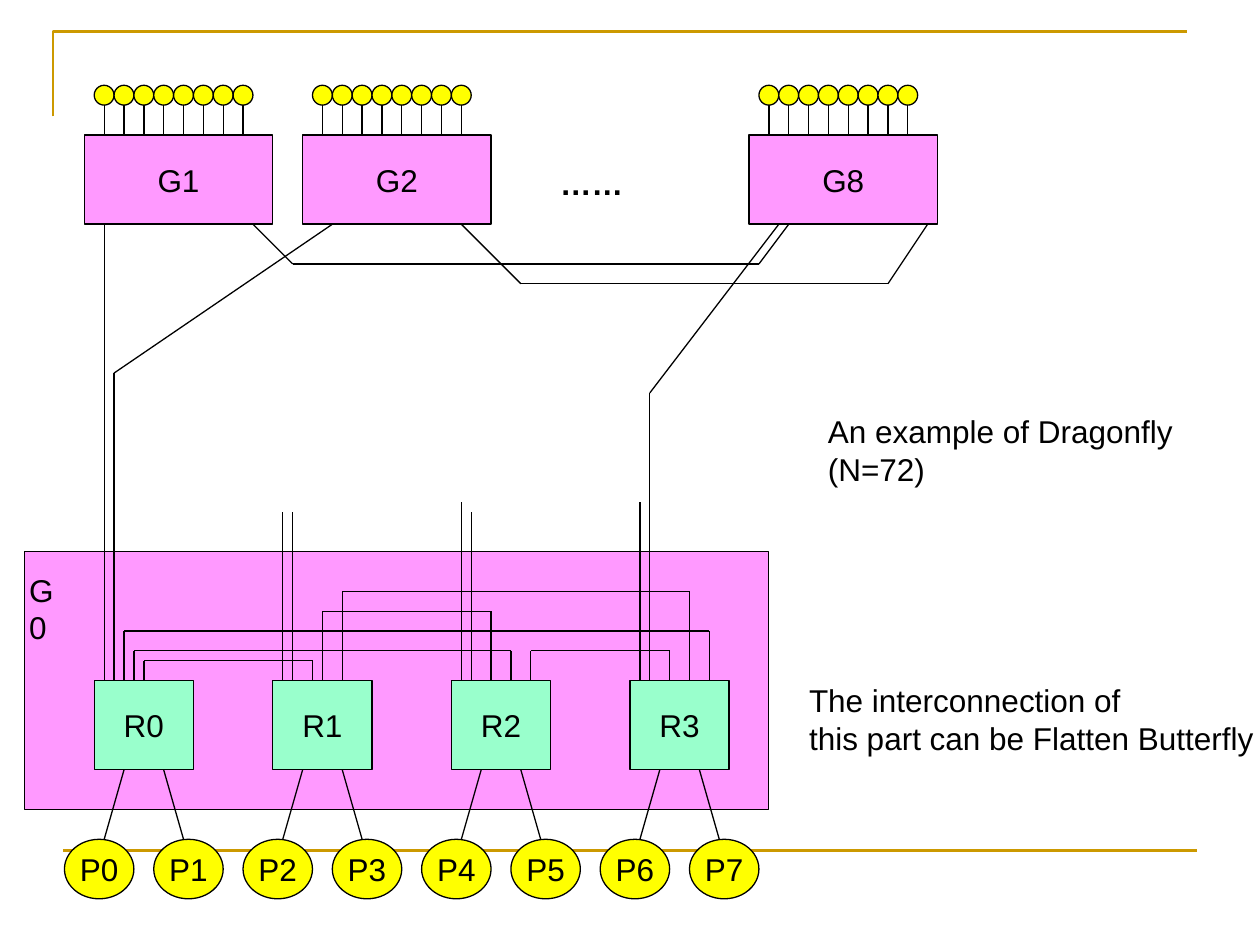
from itertools import pairwise

from lxml.etree import SubElement
from pptx import Presentation
from pptx.dml.color import RGBColor
from pptx.enum.shapes import MSO_CONNECTOR, MSO_SHAPE
from pptx.enum.text import MSO_ANCHOR, MSO_AUTO_SIZE, PP_ALIGN
from pptx.oxml.ns import qn
from pptx.util import Inches, Mm, Pt

BLACK = RGBColor(0x00, 0x00, 0x00)
GOLD = RGBColor(0xCC, 0x99, 0x00)
PINK = RGBColor(0xFF, 0x99, 0xFF)
MINT = RGBColor(0x99, 0xFF, 0xCC)
YELLOW = RGBColor(0xFF, 0xFF, 0x00)
FONT = {"name": "Arial", "size": Pt(18)}

deck = Presentation()
deck.slide_width, deck.slide_height = Inches(10), Inches(7.5)
wide, high = deck.slide_width, deck.slide_height
slide = deck.slides.add_slide(deck.slide_layouts[6])
shapes = slide.shapes

# The drawing sits on a 2 mm grid, shifted by part of a cell.
CELL = Mm(2)
LEFT, TOP = 0.5, 0.6


def place(col, row):
    """Turn a grid point into slide lengths."""
    return int((col + LEFT) * CELL), int((row + TOP) * CELL)


def wire(points, color=BLACK, width=0.75):
    """Join slide points, in order, with straight connectors."""
    for start, end in pairwise(points):
        line = shapes.add_connector(MSO_CONNECTOR.STRAIGHT, *start, *end)
        line.line.color.rgb = color
        line.line.width = Pt(width)
        SubElement(line._element.spPr, qn("a:effectLst"))


# Gold frame
pen = shapes.build_freeform(int(wide * 0.042), int(high * 0.123))
pen.add_line_segments(
    [(int(wide * 0.042), int(high * 0.033)), (int(wide * 0.942), int(high * 0.033))],
    close=False,
)
frame = pen.convert_to_shape()
frame.shadow.inherit = False
frame.fill.background()
frame.line.color.rgb = GOLD
frame.line.width = Pt(1.5)
wire([(int(wide * x), int(high * 0.9)) for x in (0.05, 0.95)], GOLD, 1.5)

# Boxes and discs: kind, label, col, row, cols, rows, fill
RECT, DISC = MSO_SHAPE.RECTANGLE, MSO_SHAPE.OVAL
groups = {"G1": 8, "G2": 30, "G8": 75}
nodes = [(RECT, "", 2, 55, 75, 26, PINK)]
nodes += [(RECT, f"R{i}", 9 + 18 * i, 68, 10, 9, MINT) for i in range(4)]
nodes += [(DISC, f"P{i}", 6 + 9 * i, 84, 7, 6, YELLOW) for i in range(8)]
for name, col in groups.items():
    nodes.append((RECT, name, col, 13, 19, 9, PINK))
    nodes += [(DISC, "", col + 1 + 2 * i, 8, 2, 2, YELLOW) for i in range(8)]

for kind, label, col, row, cols, rows, fill in nodes:
    node = shapes.add_shape(kind, *place(col, row), cols * CELL, rows * CELL)
    node.shadow.inherit = False
    node.fill.solid()
    node.fill.fore_color.rgb = fill
    node.line.color.rgb = BLACK
    node.line.width = Pt(0.75)
    if label:
        frame = node.text_frame
        frame.word_wrap = False
        frame.vertical_anchor = MSO_ANCHOR.MIDDLE
        para = frame.paragraphs[0]
        para.text = label
        para.alignment = PP_ALIGN.CENTER
        para.font.color.rgb = BLACK
        for key, value in FONT.items():
            setattr(para.font, key, value)

# Wires, each a list of grid points
wires = []
for col in groups.values():
    for i in range(8):
        wires.append([(col + 2 + 2 * i, 10), (col + 2 + 2 * i, 13)])
for i in range(4):
    col = 18 * i
    wires.append([(col + 10, 84), (col + 12, 77)])
    wires.append([(col + 18, 84), (col + 16, 77)])
# Links between routers: from col, to col, row of the crossbar
for start, end, row in [
    (12, 71, 63), (13, 51, 65), (14, 31, 66),
    (32, 49, 61), (34, 69, 59), (53, 67, 65),
]:
    wires.append([(start, 68), (start, row), (end, row), (end, 68)])
# Open links going up from the routers
for col, row in [(28, 51), (29, 51), (46, 50), (47, 51), (64, 50)]:
    wires.append([(col, 68), (col, row)])
# Links between groups
wires += [
    [(10, 68), (10, 22)],
    [(11, 68), (11, 37), (33, 22)],
    [(65, 68), (65, 39), (78, 22)],
    [(25, 22), (29, 26), (76, 26), (79, 22)],
    [(46, 22), (52, 28), (89, 28), (93, 22)],
]
for points in wires:
    wire([place(*point) for point in points])

# Free text: lines, col, row, cols, rows, bold
for lines, col, row, cols, rows, bold in [
    (["G0"], 1.2, 56.3, 6.7, 5.1, False),
    (["……"], 54.7, 15.3, 8.9, 5.1, True),
    (["An example of Dragonfly", "(N=72)"], 81.7, 40.3, 37.3, 8.9, False),
    (["The interconnection of", "this part can be Flatten Butterfly"],
     79.8, 67.4, 47.4, 8.9, False),
]:
    box = shapes.add_textbox(*place(col, row), int(cols * CELL), int(rows * CELL))
    frame = box.text_frame
    frame.word_wrap = False
    frame.auto_size = MSO_AUTO_SIZE.SHAPE_TO_FIT_TEXT
    frame.text = "\n".join(lines)
    for para in frame.paragraphs:
        para.font.color.rgb = BLACK
        for key, value in {**FONT, "bold": bold}.items():
            setattr(para.font, key, value)

deck.save("out.pptx")
